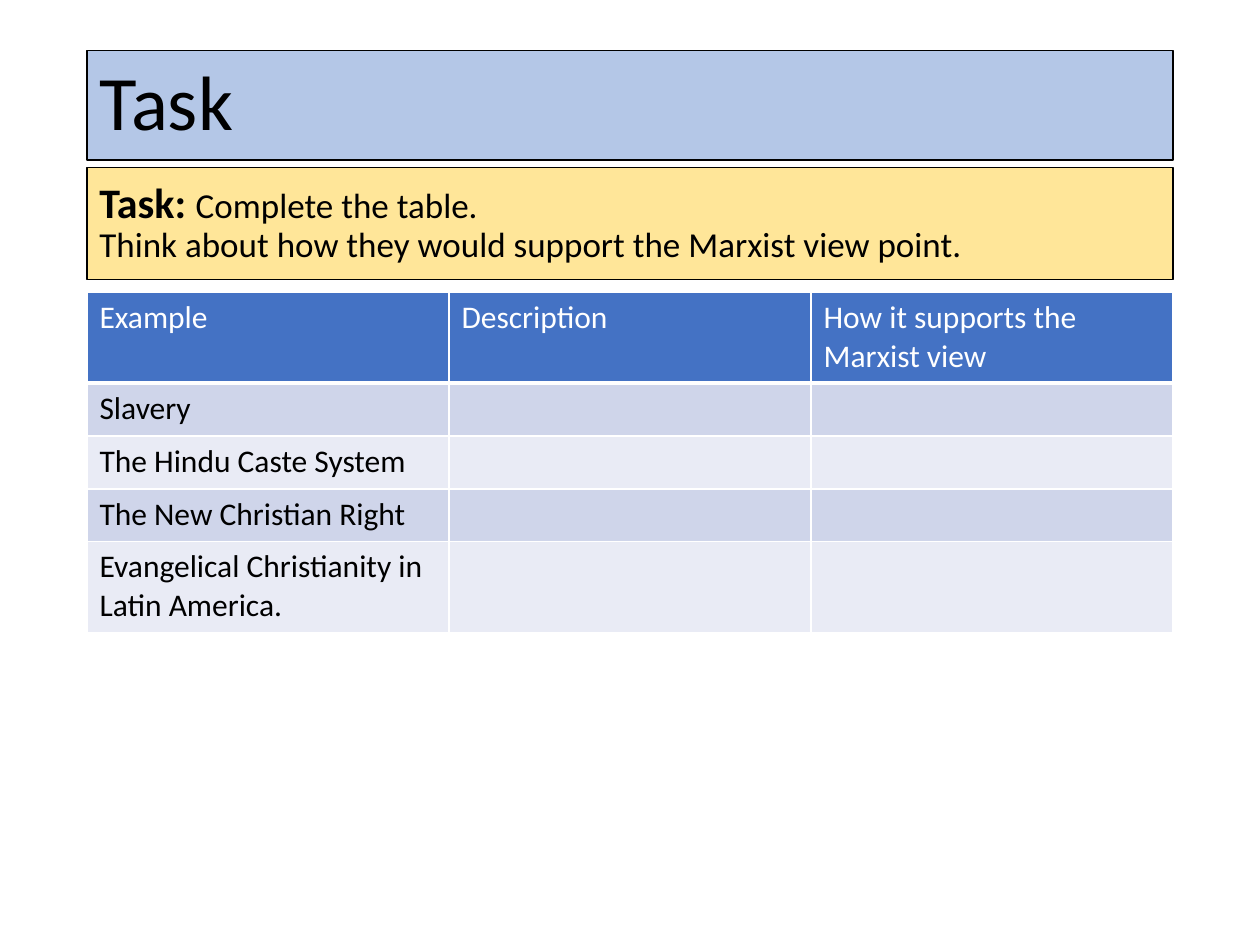
from dataclasses import dataclass

from lxml.etree import SubElement
from pptx import Presentation
from pptx.dml.color import RGBColor
from pptx.enum.shapes import MSO_SHAPE
from pptx.enum.text import MSO_ANCHOR, MSO_AUTO_SIZE, PP_ALIGN
from pptx.oxml.ns import qn
from pptx.util import Inches, Pt


@dataclass(frozen=True)
class Theme:
    font: str = "Calibri"
    black: str = "000000"
    white: str = "FFFFFF"
    title_fill: str = "B4C7E7"
    task_fill: str = "FFE699"
    header_fill: str = "4472C4"
    band_fills: tuple = ("CFD5EA", "E9EBF5")
    title_size: int = 44
    label_size: int = 24
    task_size: int = 20
    table_size: int = 18
    line_spacing: float = 0.9
    outline: float = 0.75
    grid: int = 1
    header_rule: int = 3


THEME = Theme()
LEFT, WIDTH = 0.69, 8.62

TASK_LINES = [
    [("Task: ", THEME.label_size, True),
     ("Complete the table.", THEME.task_size, False)],
    [("Think about how they would support the Marxist view point.",
      THEME.task_size, False)],
]
HEADERS = ["Example", "Description", "How it supports the Marxist view"]
EXAMPLES = ["Slavery", "The Hindu Caste System", "The New Christian Right",
            "Evangelical Christianity in Latin America."]
ROW_HEIGHTS = [0.72, 0.42, 0.42, 0.42, 0.72]


def add_run(paragraph, text, size, color=THEME.black, bold=False):
    run = paragraph.add_run()
    run.text = text
    run.font.name = THEME.font
    run.font.size = Pt(size)
    run.font.bold = bold
    run.font.color.rgb = RGBColor.from_string(color)


def format_box(box, fill, lines):
    """Fill and outline a box, then write its lines of (text, size, bold) runs."""
    box.fill.solid()
    box.fill.fore_color.rgb = RGBColor.from_string(fill)
    box.line.color.rgb = RGBColor.from_string(THEME.black)
    box.line.width = Pt(THEME.outline)
    frame = box.text_frame
    frame.word_wrap = True
    frame.auto_size = MSO_AUTO_SIZE.NONE
    frame.vertical_anchor = MSO_ANCHOR.MIDDLE
    for index, runs in enumerate(lines):
        paragraph = frame.add_paragraph() if index else frame.paragraphs[0]
        paragraph.alignment = PP_ALIGN.LEFT
        paragraph.line_spacing = THEME.line_spacing
        paragraph.space_before = Pt(0)
        for text, size, bold in runs:
            add_run(paragraph, text, size, bold=bold)


def add_title(slide, text, top, height):
    title = slide.shapes.title
    title.left, title.top = Inches(LEFT), Inches(top)
    title.width, title.height = Inches(WIDTH), Inches(height)
    format_box(title, THEME.title_fill, [[(text, THEME.title_size, False)]])


def add_task_box(slide, lines, top, height):
    box = slide.shapes.add_shape(MSO_SHAPE.RECTANGLE, Inches(LEFT), Inches(top),
                                 Inches(WIDTH), Inches(height))
    box.shadow.inherit = False
    format_box(box, THEME.task_fill, lines)


def set_borders(cell, bottom):
    # Borders are written before the fill, as the cell schema requires
    properties = cell._tc.get_or_add_tcPr()
    widths = {"a:lnL": THEME.grid, "a:lnR": THEME.grid,
              "a:lnT": THEME.grid, "a:lnB": bottom}
    for tag, width in widths.items():
        line = SubElement(properties, qn(tag), w=str(Pt(width)))
        fill = SubElement(line, qn("a:solidFill"))
        SubElement(fill, qn("a:srgbClr"), val=THEME.white)


def format_cell(cell, text, fill, color, bottom):
    set_borders(cell, bottom)
    cell.fill.solid()
    cell.fill.fore_color.rgb = RGBColor.from_string(fill)
    paragraph = cell.text_frame.paragraphs[0]
    paragraph.font.size = Pt(THEME.table_size)
    if text:
        add_run(paragraph, text, THEME.table_size, color)


def add_example_table(slide, top):
    rows = [HEADERS] + [[example, "", ""] for example in EXAMPLES]
    table = slide.shapes.add_table(
        len(rows), len(HEADERS), Inches(LEFT), Inches(top),
        Inches(WIDTH), Inches(sum(ROW_HEIGHTS))).table
    for row_index, (texts, height) in enumerate(zip(rows, ROW_HEIGHTS)):
        table.rows[row_index].height = Inches(height)
        if row_index == 0:
            style = THEME.header_fill, THEME.white, THEME.header_rule
        else:
            band = THEME.band_fills[(row_index - 1) % 2]
            style = band, THEME.black, THEME.grid
        for column_index, text in enumerate(texts):
            format_cell(table.cell(row_index, column_index), text, *style)


def main():
    presentation = Presentation()
    presentation.slide_width = Inches(10)
    presentation.slide_height = Inches(7.5)
    slide = presentation.slides.add_slide(presentation.slide_layouts[5])

    # Heading and instructions
    add_title(slide, "Task", top=0.4, height=0.87)
    add_task_box(slide, TASK_LINES, top=1.33, height=0.89)

    # Table to complete
    add_example_table(slide, top=2.32)

    presentation.save("out.pptx")


if __name__ == "__main__":
    main()
